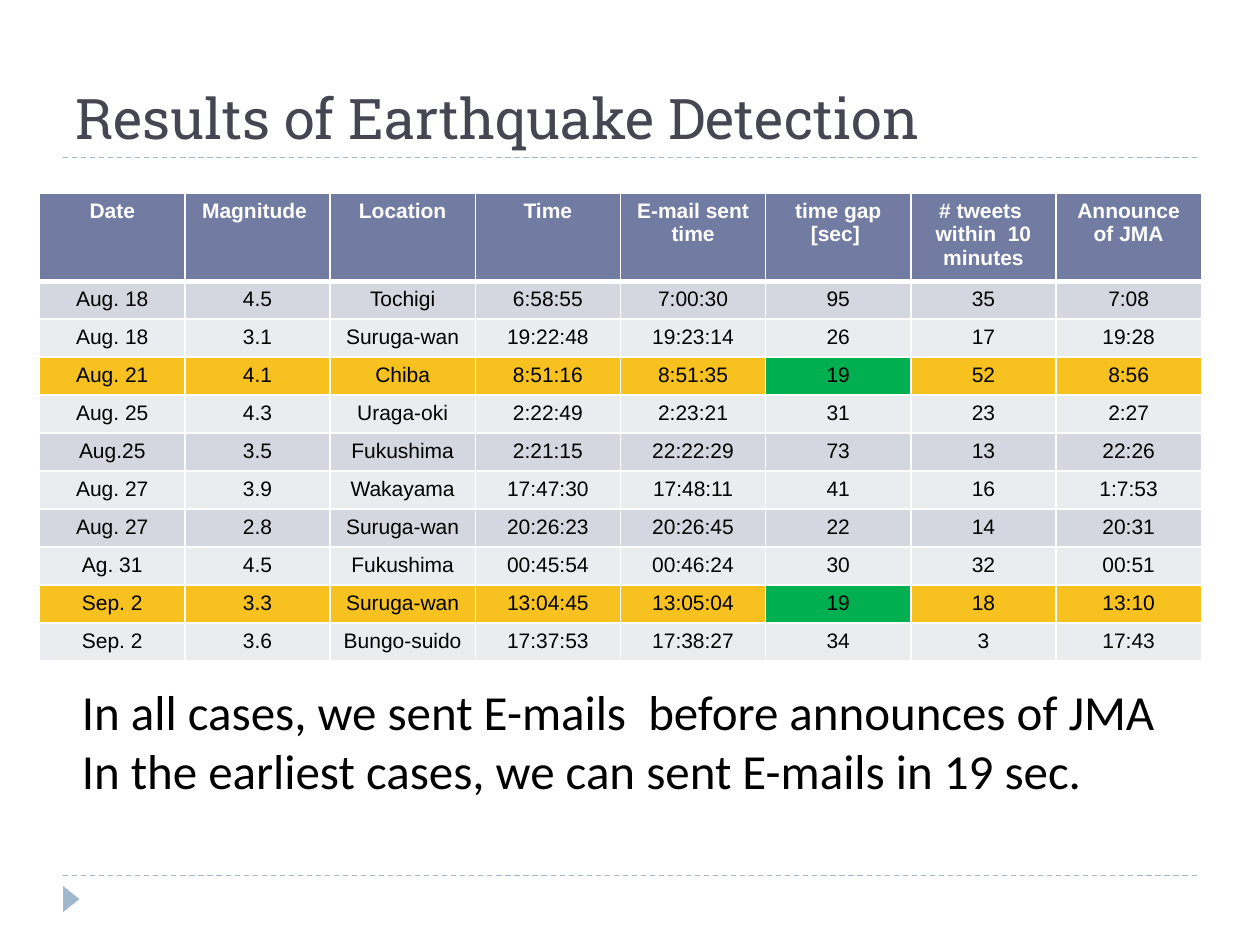
from lxml import etree
from pptx import Presentation
from pptx.dml.color import RGBColor
from pptx.enum.dml import MSO_LINE
from pptx.enum.shapes import MSO_CONNECTOR, MSO_SHAPE
from pptx.enum.text import MSO_ANCHOR, MSO_AUTO_SIZE, PP_ALIGN
from pptx.oxml.ns import qn
from pptx.util import Cm, Pt

LEFT, CENTER = PP_ALIGN.LEFT, PP_ALIGN.CENTER
TOP, BOTTOM = MSO_ANCHOR.TOP, MSO_ANCHOR.BOTTOM
FIXED = MSO_AUTO_SIZE.NONE
DASH = MSO_LINE.DASH
STRAIGHT = MSO_CONNECTOR.STRAIGHT
TRIANGLE = MSO_SHAPE.ISOSCELES_TRIANGLE

COLORS = {
    "title": "464653",
    "accent": "9FB8CD",
    "head": "727CA3",
    "odd": "D5D7E0",
    "even": "EBECF0",
    "mark": "F7C120",
    "best": "00B050",
    "black": "000000",
    "white": "FFFFFF",
}

HEADS = ["Date", "Magnitude ", "Location", "Time", "E-mail sent time",
         "time gap\n[sec] ", "# tweets  within  10 minutes", "Announce of JMA"]
QUAKES = [
    ["Aug. 18", "4.5", "Tochigi", "6:58:55", "7:00:30", "95", "35", "7:08"],
    ["Aug. 18", "3.1", "Suruga-wan", "19:22:48", "19:23:14", "26", "17", "19:28"],
    ["Aug. 21", "4.1", "Chiba", "8:51:16", "8:51:35", "19", "52", "8:56"],
    ["Aug. 25", "4.3", "Uraga-oki", "2:22:49", "2:23:21", "31", "23", "2:27"],
    ["Aug.25", "3.5", "Fukushima", "2:21:15", "22:22:29", "73", "13", "22:26"],
    ["Aug. 27", "3.9", "Wakayama", "17:47:30", "17:48:11", "41", "16", "1:7:53"],
    ["Aug. 27", "2.8", "Suruga-wan", "20:26:23", "20:26:45", "22", "14", "20:31"],
    ["Ag. 31", "4.5", "Fukushima", "00:45:54", "00:46:24", "30", "32", "00:51"],
    ["Sep. 2", "3.3", "Suruga-wan", "13:04:45", "13:05:04", "19", "18", "13:10"],
    ["Sep. 2", "3.6", "Bungo-suido", "17:37:53", "17:38:27", "34", "3", "17:43"],
]
GAP = 5
FASTEST = min(int(quake[GAP]) for quake in QUAKES)
NOTES = ("In all cases, we sent E-mails  before announces of JMA\n"
         "In the earliest cases, we can sent E-mails in 19 sec.")


def paint(name):
    return RGBColor.from_string(COLORS[name])


def write(frame, text, font="Arial", size=12, color="black", bold=False,
          align=LEFT, anchor=TOP):
    frame.word_wrap = True
    frame.vertical_anchor = anchor
    for i, line in enumerate(text.split("\n")):
        para = frame.add_paragraph() if i else frame.paragraphs[0]
        para.alignment = align
        run = para.add_run()
        run.text = line
        run.font.name = font
        run.font.size = Pt(size)
        run.font.bold = bold
        run.font.color.rgb = paint(color)


def add_rule(slide, x, y, width):
    rule = slide.shapes.add_connector(STRAIGHT, Cm(x), Cm(y), Cm(x + width), Cm(y))
    rule.line.color.rgb = paint("accent")
    rule.line.width = Pt(0.75)
    rule.line.dash_style = DASH
    etree.SubElement(rule._element.spPr, qn("a:effectLst"))


def add_title(slide, x, y, width, height):
    title = slide.shapes.title
    title.left, title.top = Cm(x), Cm(y)
    title.width, title.height = Cm(width), Cm(height)
    write(title.text_frame, "Results of Earthquake Detection", font="Roboto Slab",
          size=32, color="title", anchor=BOTTOM)
    title.text_frame.auto_size = FIXED
    add_rule(slide, x, y + height, width)


def add_foot(slide, x, y, width):
    """Rule with a small pointer below its left end."""
    add_rule(slide, x, y, width)
    mark = slide.shapes.add_shape(TRIANGLE, Cm(x - 0.1), Cm(y + 0.31), Cm(0.53), Cm(0.33))
    mark.rotation = 90
    mark.shadow.inherit = False
    mark.fill.solid()
    mark.fill.fore_color.rgb = paint("accent")
    mark.line.fill.background()


def edge_cell(cell, top, bottom):
    """White borders; the line elements must come before the cell's fill."""
    props = cell._tc.get_or_add_tcPr()
    sides = {"a:lnL": 1, "a:lnR": 1, "a:lnT": top, "a:lnB": bottom}
    for i, (tag, width) in enumerate(sides.items()):
        line = etree.Element(qn(tag), w=str(Pt(width)))
        fill = etree.SubElement(line, qn("a:solidFill"))
        etree.SubElement(fill, qn("a:srgbClr"), val=COLORS["white"])
        props.insert(i, line)


def pick_fill(row, col):
    if row == 0:
        return "head"
    if int(QUAKES[row - 1][GAP]) == FASTEST:
        return "best" if col == GAP else "mark"
    return "odd" if row % 2 else "even"


def add_grid(slide, x, y, width, height):
    rows = [HEADS] + QUAKES
    head = 1.75
    step = (height - head) / len(QUAKES)
    grid = slide.shapes.add_table(len(rows), len(HEADS), Cm(x), Cm(y),
                                  Cm(width), Cm(height)).table
    for col in grid.columns:
        col.width = Cm(width / len(HEADS))
    for r, row in enumerate(rows):
        grid.rows[r].height = Cm(step if r else head)
        for c, text in enumerate(row):
            cell = grid.cell(r, c)
            write(cell.text_frame, text, color="black" if r else "white",
                  bold=r == 0, align=CENTER)
            cell.fill.solid()
            cell.fill.fore_color.rgb = paint(pick_fill(r, c))
            edge_cell(cell, top=3 if r == 1 else 1, bottom=1 if r else 3)


def add_notes(slide, x, y, width, height):
    box = slide.shapes.add_textbox(Cm(x), Cm(y), Cm(width), Cm(height))
    write(box.text_frame, NOTES, font="Calibri", size=28)


def main():
    deck = Presentation()
    deck.slide_width, deck.slide_height = Cm(25.4), Cm(19.05)
    slide = deck.slides.add_slide(deck.slide_layouts[5])
    add_foot(slide, 1.27, 17.65, 22.86)
    add_title(slide, 1.27, 0.43, 22.86, 2.74)
    add_notes(slide, 1.4, 13.61, 23.22, 2.64)
    add_grid(slide, 0.8, 3.89, 23.42, 9.4)
    deck.save("out.pptx")


if __name__ == "__main__":
    main()
